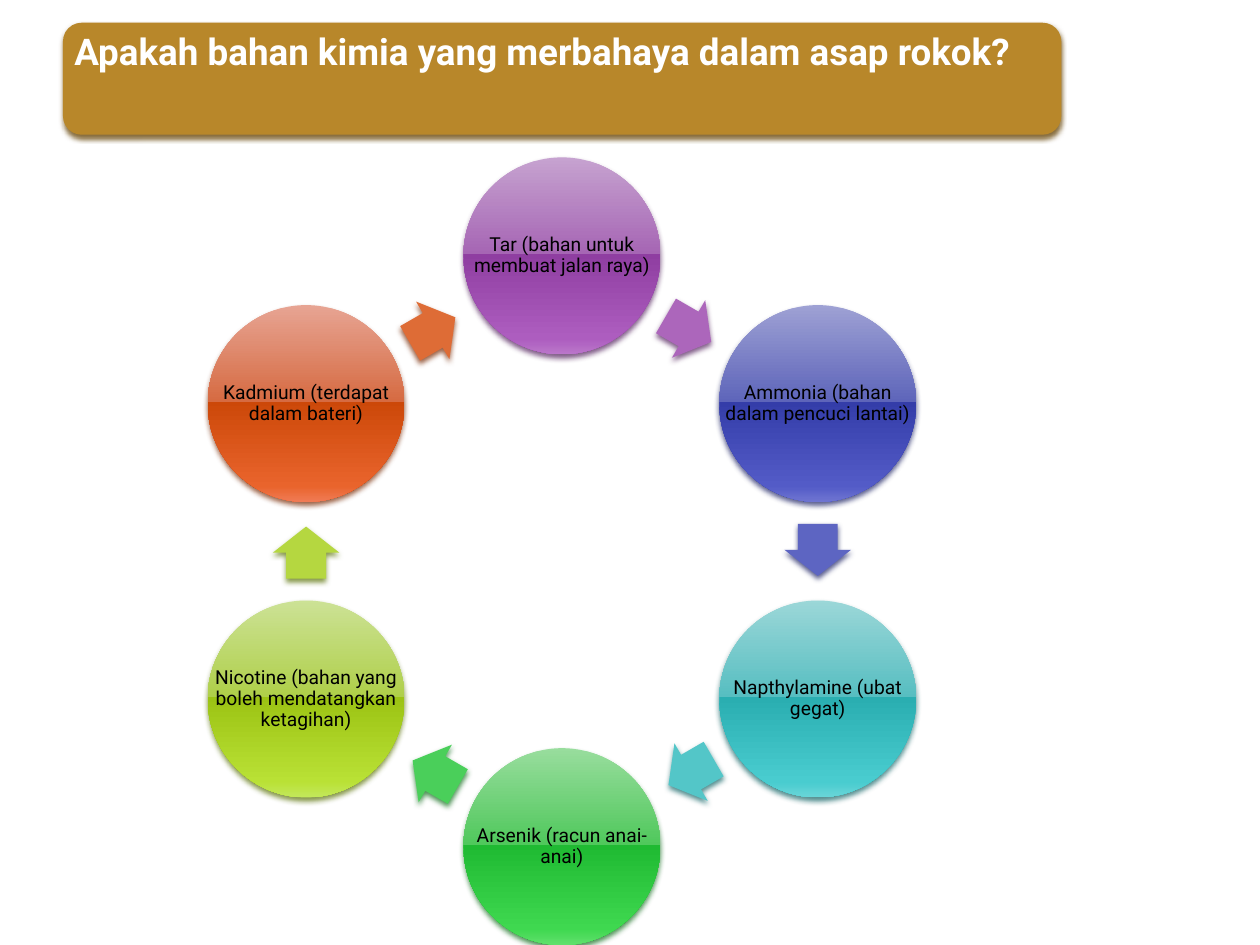
from dataclasses import dataclass
from math import cos, radians, sin

from lxml.etree import SubElement
from pptx import Presentation
from pptx.dml.color import RGBColor
from pptx.enum.shapes import MSO_SHAPE
from pptx.enum.text import MSO_ANCHOR, MSO_AUTO_SIZE, PP_ALIGN
from pptx.oxml.ns import qn
from pptx.shapes.autoshape import Shape
from pptx.slide import Slide
from pptx.text.text import TextFrame
from pptx.util import Pt

FONT = "Roboto"
WHITE = RGBColor(0xFF, 0xFF, 0xFF)
BLACK = RGBColor(0x00, 0x00, 0x00)
BANNER_FILL = RGBColor(0xB8, 0x87, 0x2A)
BANNER_SHADOW = RGBColor(0x72, 0x53, 0x1A)

BANNER_BOX = (Pt(36), Pt(13), Pt(570.5), Pt(64))
RING_X, RING_Y, RING_RADIUS = 321.1, 315, 168.8
DISC_SIZE = 112.5
ARROW_LENGTH, ARROW_WIDTH = 29.8, 38
ARROW_SETBACK = 0.8
GRADIENT_POSITIONS = (0, 49, 49, 92, 100)


@dataclass(frozen=True)
class Chemical:
    text: str
    gradient: tuple[RGBColor, ...]
    arrow: RGBColor
    shadow: RGBColor


def colours(codes: str) -> tuple[RGBColor, ...]:
    return tuple(RGBColor.from_string(code) for code in codes.split())


CHEMICALS = [
    Chemical("Tar (bahan untuk membuat jalan raya)",
             colours("C6A2D0 A666B4 8F3EA1 AD5DBF BA76CA"),
             RGBColor(0xAC, 0x66, 0xBB), RGBColor(0x6A, 0x3F, 0x73)),
    Chemical("Ammonia (bahan dalam pencuci lantai)",
             colours("9EA1D4 5E65BA 343DA9 535BC7 6F75D1"),
             RGBColor(0x5D, 0x65, 0xC2), RGBColor(0x39, 0x3E, 0x78)),
    Chemical("Napthylamine (ubat gegat)",
             colours("9BD7D8 57BEC1 2AAEB1 49CCCF 68D5D8"),
             RGBColor(0x53, 0xC6, 0xC8), RGBColor(0x33, 0x7A, 0x7C)),
    Chemical("Arsenik (racun anai-anai)",
             colours("98DD9D 50C85C 1FBA32 3FD850 61E06D"),
             RGBColor(0x4A, 0xCF, 0x5A), RGBColor(0x2E, 0x80, 0x38)),
    Chemical("Nicotine (bahan yang boleh mendatangkan ketagihan)",
             colours("CCE295 AFCF49 9CC314 B9E135 C3E85B"),
             RGBColor(0xB5, 0xD7, 0x40), RGBColor(0x70, 0x85, 0x27)),
    Chemical("Kadmium (terdapat dalam bateri)",
             colours("E7A493 D66B42 CC4809 E9642C F07B55"),
             RGBColor(0xDE, 0x6C, 0x36), RGBColor(0x89, 0x43, 0x21)),
]


def set_shadow(shape: Shape, colour: RGBColor) -> None:
    shape.shadow.inherit = False
    effects = shape._element.spPr.find(qn("a:effectLst"))
    shadow = SubElement(effects, qn("a:outerShdw"), blurRad=str(Pt(3.1)),
                        dist=str(Pt(2)), dir="5400000", rotWithShape="0")
    shade = SubElement(shadow, qn("a:srgbClr"), val=str(colour))
    SubElement(shade, qn("a:alpha"), val="83000")


def set_gradient(shape: Shape, stops: tuple[RGBColor, ...]) -> None:
    """Fill from top to bottom with one stop for each gradient position."""
    shape.fill.gradient()
    shape.fill.gradient_angle = 270
    stop_list = shape._element.spPr.find(qn("a:gradFill")).find(qn("a:gsLst"))
    for stop in list(stop_list):
        stop_list.remove(stop)
    for position, colour in zip(GRADIENT_POSITIONS, stops):
        stop = SubElement(stop_list, qn("a:gs"), pos=str(position * 1000))
        SubElement(stop, qn("a:srgbClr"), val=str(colour))


def set_text(frame: TextFrame, text: str, size: float, colour: RGBColor,
             alignment: PP_ALIGN, anchor: MSO_ANCHOR, margin: float,
             bold: bool = False) -> None:
    frame.word_wrap = True
    frame.auto_size = MSO_AUTO_SIZE.NONE
    frame.vertical_anchor = anchor
    frame.margin_left = frame.margin_right = Pt(margin)
    frame.margin_top = frame.margin_bottom = Pt(margin)
    paragraph = frame.paragraphs[0]
    paragraph.alignment = alignment
    paragraph.line_spacing = 0.9
    paragraph.space_before = Pt(0)
    run = paragraph.add_run()
    run.text = text
    run.font.name = FONT
    run.font.size = Pt(size)
    run.font.bold = bold
    run.font.color.rgb = colour


def add_title(slide: Slide, text: str) -> None:
    banner = slide.shapes.add_shape(MSO_SHAPE.ROUNDED_RECTANGLE, *BANNER_BOX)
    banner.fill.solid()
    banner.fill.fore_color.rgb = BANNER_FILL
    banner.line.fill.background()
    set_shadow(banner, BANNER_SHADOW)

    title = slide.shapes.title
    title.left, title.top, title.width, title.height = BANNER_BOX
    set_text(title.text_frame, text, 21, WHITE, PP_ALIGN.LEFT,
             MSO_ANCHOR.TOP, 6.5, bold=True)
    banner._element.addnext(title._element)


def add_disc(slide: Slide, chemical: Chemical, angle: float) -> None:
    left = RING_X + RING_RADIUS * cos(radians(angle)) - DISC_SIZE / 2
    top = RING_Y + RING_RADIUS * sin(radians(angle)) - DISC_SIZE / 2
    box = (Pt(left), Pt(top), Pt(DISC_SIZE), Pt(DISC_SIZE))
    disc = slide.shapes.add_shape(MSO_SHAPE.OVAL, *box)
    set_gradient(disc, chemical.gradient)
    disc.line.fill.background()
    set_shadow(disc, chemical.shadow)
    label = slide.shapes.add_textbox(*box)
    set_text(label.text_frame, chemical.text, 11, BLACK, PP_ALIGN.CENTER,
             MSO_ANCHOR.MIDDLE, 1.5)


def add_arrow(slide: Slide, chemical: Chemical, angle: float) -> None:
    """Place an arrow midway between two discs, pointing clockwise."""
    distance = RING_RADIUS * cos(radians(30))
    heading = angle + 90
    center_x = (RING_X + distance * cos(radians(angle))
                - ARROW_SETBACK * cos(radians(heading)))
    center_y = (RING_Y + distance * sin(radians(angle))
                - ARROW_SETBACK * sin(radians(heading)))
    arrow = slide.shapes.add_shape(
        MSO_SHAPE.RIGHT_ARROW, Pt(center_x - ARROW_LENGTH / 2),
        Pt(center_y - ARROW_WIDTH / 2), Pt(ARROW_LENGTH), Pt(ARROW_WIDTH))
    arrow.adjustments[0] = 0.6
    arrow.adjustments[1] = 0.5
    arrow.rotation = heading
    arrow.fill.solid()
    arrow.fill.fore_color.rgb = chemical.arrow
    arrow.line.fill.background()
    set_shadow(arrow, chemical.shadow)


def main() -> None:
    presentation = Presentation()
    presentation.slide_width = Pt(720)
    presentation.slide_height = Pt(540)
    slide = presentation.slides.add_slide(presentation.slide_layouts[5])
    add_title(slide, "Apakah bahan kimia yang merbahaya dalam asap rokok?")
    step = 360 / len(CHEMICALS)
    for index, chemical in enumerate(CHEMICALS):
        angle = -90 + index * step
        add_disc(slide, chemical, angle)
        add_arrow(slide, chemical, angle + step / 2)
    presentation.save("out.pptx")


if __name__ == "__main__":
    main()
